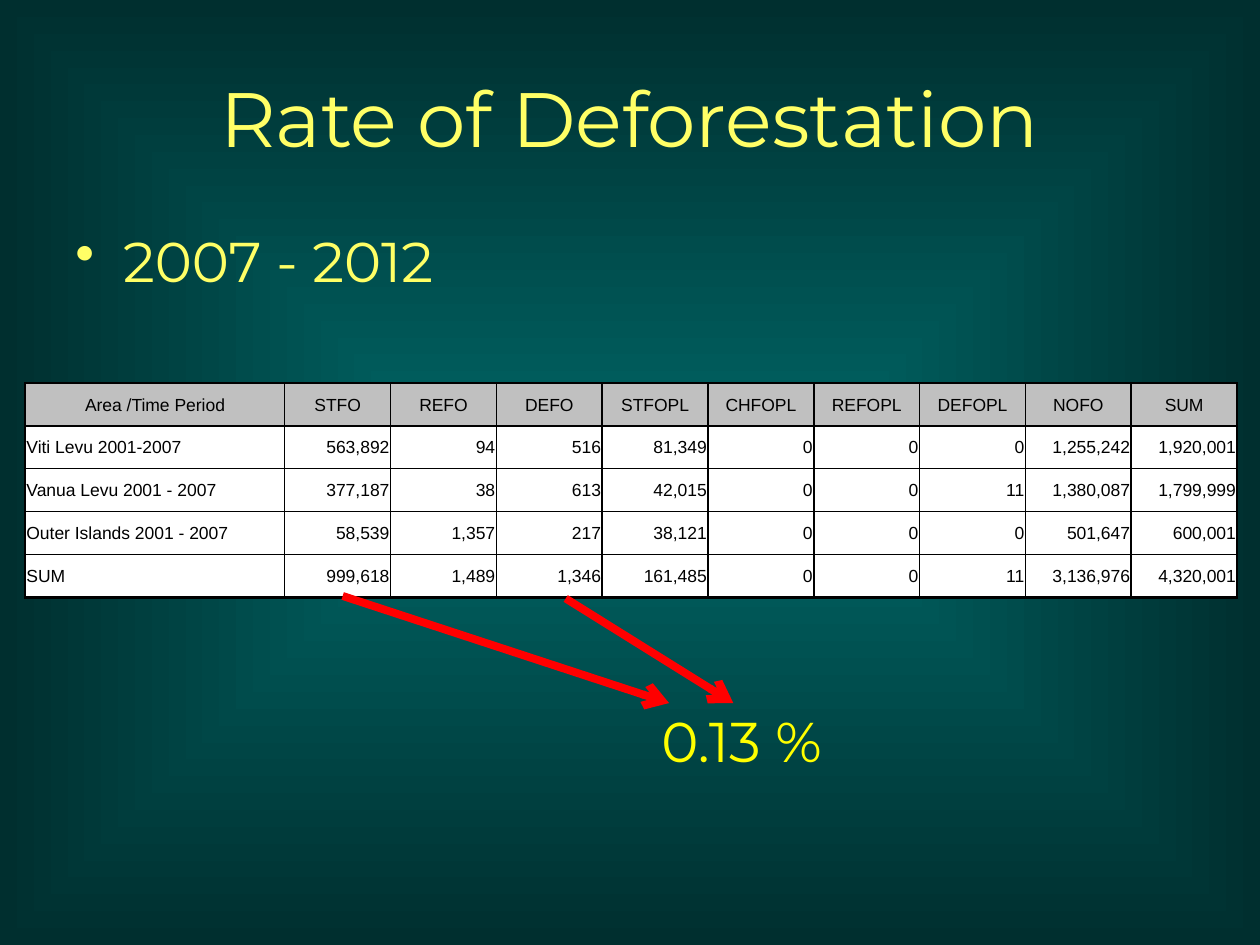
from lxml import etree
from pptx import Presentation
from pptx.dml.color import RGBColor
from pptx.enum.shapes import MSO_CONNECTOR
from pptx.enum.text import MSO_ANCHOR, MSO_AUTO_SIZE, PP_ALIGN
from pptx.oxml.ns import qn
from pptx.util import Inches, Pt

LEFT, CENTER, RIGHT = PP_ALIGN.LEFT, PP_ALIGN.CENTER, PP_ALIGN.RIGHT
TOP, MIDDLE = MSO_ANCHOR.TOP, MSO_ANCHOR.MIDDLE
STRAIGHT = MSO_CONNECTOR.STRAIGHT
GROW = MSO_AUTO_SIZE.SHAPE_TO_FIT_TEXT

TEAL = RGBColor(0x00, 0x66, 0x66)
DARK = RGBColor(0x00, 0x2F, 0x2F)
CREAM = RGBColor(0xFF, 0xFF, 0x66)
YELLOW = RGBColor(0xFF, 0xFF, 0x00)
RED = RGBColor(0xFF, 0x00, 0x00)
GREY = RGBColor(0xC0, 0xC0, 0xC0)
WHITE = RGBColor(0xFF, 0xFF, 0xFF)
BLACK = RGBColor(0x00, 0x00, 0x00)

WIDTH, HEIGHT = 10, 7.5
EDGE = 0.05 * WIDTH
SPAN = WIDTH - 2 * EDGE
GRID_X, GRID_Y = 0.2, 3.04
NAME_W, COL_W, ROW_H = 2.06, 0.84, 0.34

ROWS = [
    ["Area /Time Period", "STFO", "REFO", "DEFO", "STFOPL",
     "CHFOPL", "REFOPL", "DEFOPL", "NOFO", "SUM"],
    ["Viti Levu 2001-2007", "563,892", "94", "516", "81,349",
     "0", "0", "0", "1,255,242", "1,920,001"],
    ["Vanua Levu 2001 - 2007", "377,187", "38", "613", "42,015",
     "0", "0", "11", "1,380,087", "1,799,999"],
    ["Outer Islands 2001 - 2007", "58,539", "1,357", "217", "38,121",
     "0", "0", "0", "501,647", "600,001"],
    ["SUM", "999,618", "1,489", "1,346", "161,485",
     "0", "0", "11", "3,136,976", "4,320,001"],
]


def add_node(parent, tag, **attrs):
    return etree.SubElement(parent, qn(tag), attrs)


def style(item, values):
    for name, value in values.items():
        setattr(item, name, value)


def write(frame, text, size, font, color, align=LEFT):
    para = frame.paragraphs[0]
    para.text = text
    para.alignment = align
    style(para.font, {"size": Pt(size), "name": font, "bold": False})
    para.font.color.rgb = color


def place(shape, *box):
    names = ("left", "top", "width", "height")
    style(shape, dict(zip(names, map(Inches, box))))


def paint_back(slide):
    fill = slide.background.fill
    fill.gradient()
    for stop, color in zip(fill.gradient_stops, (TEAL, DARK)):
        stop.color.rgb = color
    grad = slide.background._cSld.find(".//" + qn("a:gradFill"))
    grad.remove(grad.find(qn("a:lin")))
    shade = add_node(grad, "a:path", path="shape")
    add_node(shade, "a:fillToRect", l="50000", t="50000", r="50000", b="50000")


def add_title(slide, text):
    title = slide.shapes.title
    place(title, EDGE, 0.04 * HEIGHT, SPAN, HEIGHT / 6)
    title.text_frame.vertical_anchor = MIDDLE
    write(title.text_frame, text, 44, "Montserrat", CREAM, CENTER)


def add_text(slide, text, box, color, wrap):
    frame = slide.shapes.add_textbox(*map(Inches, box)).text_frame
    style(frame, {"word_wrap": wrap, "vertical_anchor": TOP})
    if not wrap:
        frame.auto_size = GROW
    write(frame, text, 32, "Montserrat", color)
    return frame


def add_bullet(slide, text, box):
    frame = add_text(slide, text, box, CREAM, True)
    props = frame.paragraphs[0]._p.get_or_add_pPr()
    props.set("marL", str(Inches(0.38)))
    props.set("indent", str(Inches(-0.38)))
    dot = etree.Element(qn("a:buChar"), char="•")
    props.insert(0, dot)


def add_edges(cell, last):
    props = cell._tc.get_or_add_tcPr()
    for side in "LRTB":
        width = 2 if last and side == "B" else 1
        line = add_node(props, "a:ln" + side, w=str(Pt(width)))
        fill = add_node(line, "a:solidFill")
        add_node(fill, "a:srgbClr", val=str(BLACK))


def fill_cell(cell, text, row, col):
    add_edges(cell, row == len(ROWS) - 1)
    cell.fill.solid()
    cell.fill.fore_color.rgb = WHITE if row else GREY
    pad = Inches(0.01)
    style(cell, {"margin_left": pad, "margin_right": pad, "margin_top": pad,
                 "margin_bottom": 0, "vertical_anchor": MIDDLE})
    align = CENTER if row == 0 else RIGHT if col else LEFT
    write(cell.text_frame, text, 10, "Arial", BLACK, align)


def add_grid(slide):
    count = len(ROWS[0])
    box = (GRID_X, GRID_Y, NAME_W + (count - 1) * COL_W, len(ROWS) * ROW_H)
    table = slide.shapes.add_table(len(ROWS), count, *map(Inches, box)).table
    style(table, {"first_row": False, "horz_banding": False})
    for col in range(count):
        table.columns[col].width = Inches(COL_W if col else NAME_W)
    for row, texts in enumerate(ROWS):
        table.rows[row].height = Inches(ROW_H)
        for col, text in enumerate(texts):
            fill_cell(table.cell(row, col), text, row, col)


def add_arrow(slide, start, end):
    arrow = slide.shapes.add_connector(STRAIGHT, *map(Inches, start + end))
    arrow.line.width = Pt(4.5)
    arrow.line.color.rgb = RED
    add_node(arrow.line._get_or_add_ln(), "a:tailEnd", type="arrow")
    add_node(arrow._element.spPr, "a:effectLst")


def main():
    deck = Presentation()
    style(deck, {"slide_width": Inches(WIDTH), "slide_height": Inches(HEIGHT)})
    slide = deck.slides.add_slide(deck.slide_layouts[5])
    paint_back(slide)
    add_title(slide, "Rate of Deforestation")
    add_bullet(slide, "2007 - 2012", (EDGE, 1.75, SPAN, 0.66 * HEIGHT))
    add_grid(slide)
    for start, end in (((2.72, 4.73), (5.31, 5.58)),
                       ((4.49, 4.75), (5.82, 5.58))):
        add_arrow(slide, start, end)
    add_text(slide, "0.13 %", (5.15, 5.56, 1.85, 0.64), YELLOW, False)
    deck.save("out.pptx")


if __name__ == "__main__":
    main()
